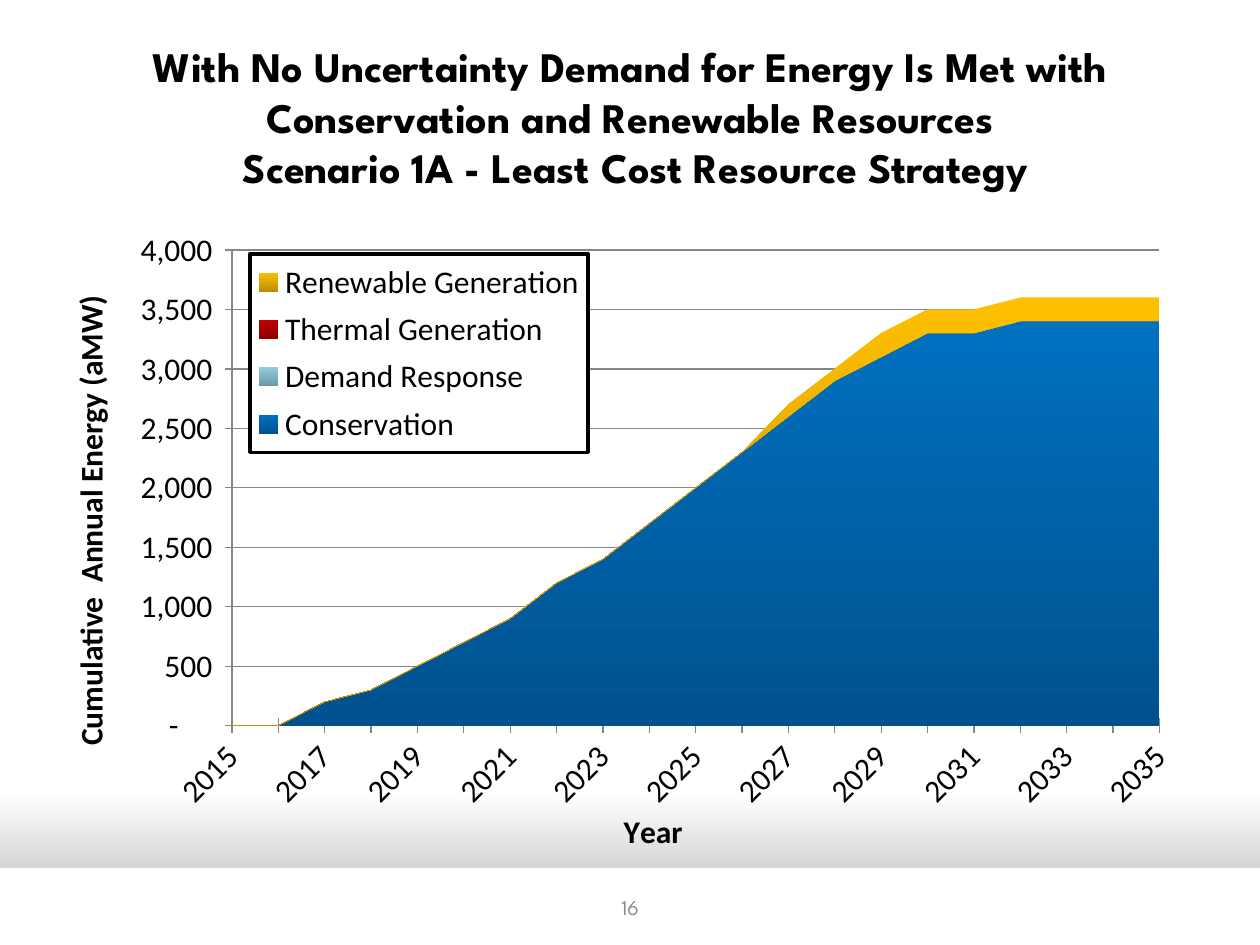
from dataclasses import dataclass

import pptx
import pptx.chart.data
import pptx.dml.color
import pptx.enum.chart
import pptx.enum.shapes
import pptx.enum.text
import pptx.oxml
import pptx.oxml.ns
import pptx.util
from pptx.util import Pt


@dataclass(frozen=True)
class Theme:
    heading_font: str = "League Spartan"
    chart_font: str = "Calibri"
    title_size: int = 24
    chart_size: int = 18
    number_size: int = 12
    text: str = "000000"
    muted: str = "8C8C8C"
    grid: str = "868686"
    paper: str = "FFFFFF"
    shade: str = "A6A6A6"


THEME = Theme()
YEARS = range(2015, 2036)
NONE = [0] * len(YEARS)
CONSERVATION = [0, 0, 200, 300, 500, 700, 900, 1200, 1400, 1700, 2000, 2300,
                2600, 2900, 3100, 3300, 3300, 3400, 3400, 3400, 3400]
RENEWABLE = [0] * 12 + [100] * 2 + [200] * 7
# Name, values, top colour and bottom colour of each band
SERIES = [
    ("Conservation", CONSERVATION, "0070C0", "00528E"),
    ("Demand Response", NONE, "92CDDC", "6B98A3"),
    ("Thermal Generation", NONE, "C00000", "8E0000"),
    ("Renewable Generation", RENEWABLE, "FFC000", "BD8E00"),
]


def rgb(value):
    return pptx.dml.color.RGBColor.from_string(value)


def format_font(font, name, size, color, bold=False):
    font.name, font.size, font.bold = name, Pt(size), bold
    font.color.rgb = rgb(color)


def chart_xml(tag, content="", attributes=""):
    namespaces = pptx.oxml.ns.nsdecls("c", "a")
    return pptx.oxml.parse_xml(f"<{tag} {namespaces} {attributes}>{content}</{tag}>")


def fill_gradient(fill, stops):
    """Fill from top to bottom with two (position, colour) stops."""
    fill.gradient()
    fill.gradient_angle = 270
    for stop, (position, color) in zip(fill.gradient_stops, stops):
        stop.position = position
        stop.color.rgb = rgb(color)


def set_layout(element, index, inner=False, **fractions):
    """Place a chart part by fractions of the chart area."""
    for old in element.findall(pptx.oxml.ns.qn("c:layout")):
        element.remove(old)
    target = '<c:layoutTarget val="inner"/>' if inner else ""
    modes = '<c:xMode val="edge"/><c:yMode val="edge"/>'
    places = "".join(f'<c:{key} val="{value}"/>' for key, value in fractions.items())
    element.insert(index, chart_xml(
        "c:layout", f"<c:manualLayout>{target}{modes}{places}</c:manualLayout>"))


def format_axis(axis, title):
    axis.has_title = True
    frame = axis.axis_title.text_frame
    frame.text = title
    format_font(frame.paragraphs[0].runs[0].font, THEME.chart_font,
                THEME.chart_size, THEME.text, bold=True)
    axis.major_tick_mark = pptx.enum.chart.XL_TICK_MARK.CROSS
    axis.minor_tick_mark = pptx.enum.chart.XL_TICK_MARK.NONE
    axis.format.line.color.rgb = rgb(THEME.grid)
    axis.format.line.width = Pt(0.75)
    format_font(axis.tick_labels.font, THEME.chart_font, THEME.chart_size, THEME.text)


def format_category_axis(axis):
    """Label every second year, slanted upwards."""
    format_axis(axis, "Year")
    axis.has_major_gridlines = False
    element = axis._element
    element.find(pptx.oxml.ns.qn("c:txPr")).bodyPr.set("rot", "-2700000")
    last = element.find(pptx.oxml.ns.qn("c:noMultiLvlLbl"))
    last.addprevious(chart_xml("c:tickLblSkip", attributes='val="2"'))


def format_value_axis(axis):
    format_axis(axis, "Cumulative  Annual Energy (aMW)")
    axis.minimum_scale, axis.maximum_scale, axis.major_unit = 0, 4000, 500
    axis.tick_labels.number_format = r'_(* #,##0_);_(* \(#,##0\);_(* "-"??_);_(@_)'
    axis.tick_labels.number_format_is_linked = False
    axis.has_major_gridlines = True
    axis.major_gridlines.format.line.color.rgb = rgb(THEME.grid)
    axis.major_gridlines.format.line.width = Pt(0.75)
    axis._element.find(pptx.oxml.ns.qn("c:crossBetween")).set("val", "midCat")


def add_legend(chart):
    chart.has_legend = True
    legend = chart.legend
    legend.position = pptx.enum.chart.XL_LEGEND_POSITION.RIGHT
    legend.include_in_layout = False
    format_font(legend.font, THEME.chart_font, THEME.chart_size, THEME.text)
    set_layout(legend._element, 1, x=0.165, y=0.052, w=0.298, h=0.31)
    legend._element.find(pptx.oxml.ns.qn("c:txPr")).addprevious(chart_xml(
        "c:spPr",
        f'<a:solidFill><a:srgbClr val="{THEME.paper}"/></a:solidFill>'
        f'<a:ln w="{Pt(2)}"><a:solidFill><a:srgbClr val="{THEME.text}"/>'
        "</a:solidFill></a:ln>"))


def add_energy_chart(slide):
    data = pptx.chart.data.CategoryChartData()
    data.categories = [str(year) for year in YEARS]
    for name, values, *_ in SERIES:
        data.add_series(name, values)
    chart = slide.shapes.add_chart(
        pptx.enum.chart.XL_CHART_TYPE.AREA_STACKED,
        Pt(36), Pt(126), Pt(648), Pt(366), data).chart
    chart.has_title = False
    format_font(chart.font, THEME.chart_font, THEME.chart_size, THEME.text)
    plot = chart.plots[0]
    plot.vary_by_categories = False
    for series, (_, _, top, bottom) in zip(plot.series, SERIES):
        fill_gradient(series.format.fill, [(0, top), (1, bottom)])
    format_category_axis(chart.category_axis)
    format_value_axis(chart.value_axis)
    plot_area = chart._chartSpace.find(".//" + pptx.oxml.ns.qn("c:plotArea"))
    set_layout(plot_area, 0, inner=True, x=0.149, y=0.046, w=0.818, h=0.743)
    add_legend(chart)


def add_footer_band(slide):
    band = slide.shapes.add_shape(pptx.enum.shapes.MSO_SHAPE.RECTANGLE,
                                  0, Pt(496), Pt(720), Pt(44))
    band.shadow.inherit = False
    band.fill.solid()
    band.fill.fore_color.rgb = rgb(THEME.paper)
    band.line.fill.background()


def write_centered(shape, text, size, color, bold=False):
    frame = shape.text_frame
    frame.word_wrap = True
    frame.vertical_anchor = pptx.enum.text.MSO_ANCHOR.MIDDLE
    frame.text = text
    paragraph = frame.paragraphs[0]
    paragraph.alignment = pptx.enum.text.PP_ALIGN.CENTER
    for run in paragraph.runs:
        format_font(run.font, THEME.heading_font, size, color, bold)


def add_title(slide):
    title = slide.shapes.title
    title.left, title.top, title.width, title.height = Pt(36), Pt(21.6), Pt(648), Pt(90)
    write_centered(title, "With No Uncertainty Demand for Energy Is Met with "
                   "Conservation and Renewable Resources\v"
                   " Scenario 1A - Least Cost Resource Strategy",
                   THEME.title_size, THEME.text, bold=True)


def add_slide_number(slide):
    box = slide.shapes.add_textbox(Pt(276), Pt(504), Pt(168), Pt(28.8))
    write_centered(box, "16", THEME.number_size, THEME.muted)


def main():
    presentation = pptx.Presentation()
    presentation.slide_width, presentation.slide_height = Pt(720), Pt(540)
    slide = presentation.slides.add_slide(presentation.slide_layouts[5])
    fill_gradient(slide.background.fill, [(0.84, THEME.paper), (1, THEME.shade)])
    add_footer_band(slide)
    add_title(slide)
    add_energy_chart(slide)
    add_slide_number(slide)
    presentation.save("out.pptx")


if __name__ == "__main__":
    main()
